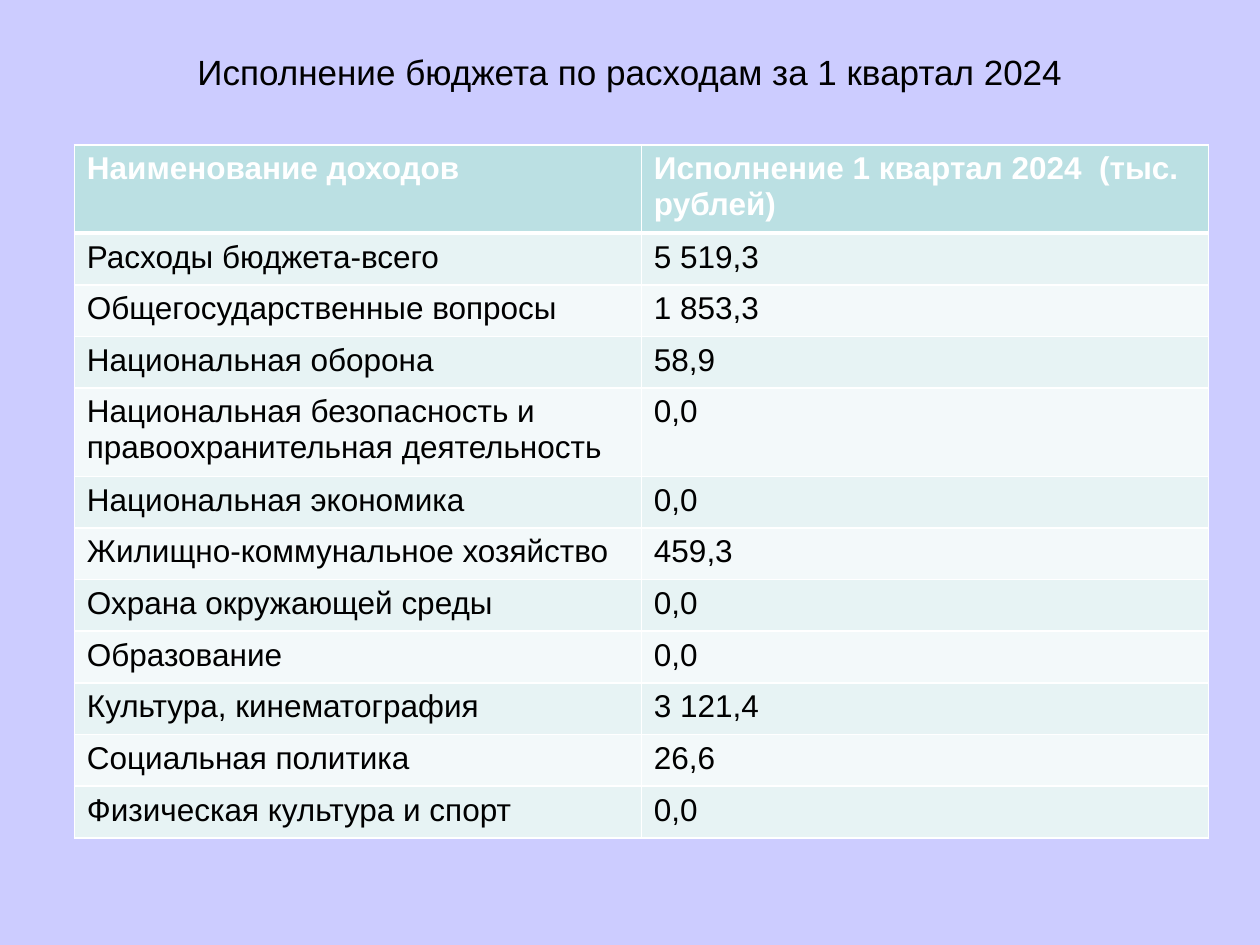
from dataclasses import dataclass
from typing import NamedTuple

from lxml.etree import SubElement
from pptx import Presentation
from pptx.dml.color import RGBColor
from pptx.enum.text import MSO_ANCHOR, PP_ALIGN
from pptx.oxml.ns import qn
from pptx.util import Inches, Pt


@dataclass(frozen=True)
class Theme:
    font: str = "Arial"
    background: str = "CCCCFF"
    text: str = "000000"
    header_text: str = "FFFFFF"
    header_fill: str = "BBE0E3"
    bands: tuple[str, str] = ("E7F3F4", "F3F9FA")
    border: str = "FFFFFF"
    border_width: float = 1
    header_rule: float = 3
    title_size: float = 20
    table_size: float = 18


class BudgetRow(NamedTuple):
    item: str
    amount: str


THEME = Theme()
TITLE = "Исполнение бюджета по расходам за 1 квартал 2024"
HEADER = BudgetRow("Наименование доходов", "Исполнение 1 квартал 2024  (тыс. рублей)")
EXPENSES = [
    BudgetRow("Расходы бюджета-всего", "5 519,3"),
    BudgetRow("Общегосударственные вопросы", "1 853,3"),
    BudgetRow("Национальная оборона", "58,9"),
    BudgetRow("Национальная безопасность и правоохранительная деятельность", "0,0"),
    BudgetRow("Национальная экономика", "0,0"),
    BudgetRow("Жилищно-коммунальное хозяйство", "459,3"),
    BudgetRow("Охрана окружающей среды", "0,0"),
    BudgetRow("Образование", "0,0"),
    BudgetRow("Культура, кинематография", "3 121,4"),
    BudgetRow("Социальная политика", "26,6"),
    BudgetRow("Физическая культура и спорт", "0,0"),
]
COLUMN_WIDTH = Inches(4.5)
ROW_HEIGHT = Inches(0.41)


def add_run(paragraph, text: str, size: float, color: str, bold: bool = False) -> None:
    run = paragraph.add_run()
    run.text = text
    run.font.name = THEME.font
    run.font.size = Pt(size)
    run.font.bold = bold
    run.font.color.rgb = RGBColor.from_string(color)


def set_borders(cell, bottom: float) -> None:
    """Draw all four sides; must precede the fill, which follows them in the schema."""
    properties = cell._tc.get_or_add_tcPr()
    widths = dict.fromkeys(("a:lnL", "a:lnR", "a:lnT"), THEME.border_width)
    for side, width in (widths | {"a:lnB": bottom}).items():
        line = SubElement(properties, qn(side), w=str(Pt(width)))
        SubElement(SubElement(line, qn("a:solidFill")), qn("a:srgbClr"), val=THEME.border)


def add_title(slide) -> None:
    title = slide.shapes.add_textbox(Inches(0.5), Inches(0.3), Inches(9), Inches(0.54))
    frame = title.text_frame
    frame.word_wrap = True
    frame.vertical_anchor = MSO_ANCHOR.MIDDLE
    paragraph = frame.paragraphs[0]
    paragraph.alignment = PP_ALIGN.CENTER
    add_run(paragraph, TITLE, THEME.title_size, THEME.text)


def add_budget_table(slide) -> None:
    rows = [HEADER, *EXPENSES]
    columns = len(HEADER)
    table = slide.shapes.add_table(
        len(rows), columns, Inches(0.59), Inches(1.15),
        COLUMN_WIDTH * columns, ROW_HEIGHT * len(rows),
    ).table
    for column in table.columns:
        column.width = COLUMN_WIDTH
    for index, budget_row in enumerate(rows):
        is_header = index == 0
        table.rows[index].height = ROW_HEIGHT
        fill = THEME.header_fill if is_header else THEME.bands[(index - 1) % 2]
        color = THEME.header_text if is_header else THEME.text
        for cell, text in zip(table.rows[index].cells, budget_row):
            set_borders(cell, THEME.header_rule if is_header else THEME.border_width)
            if index == 1:
                top = cell._tc.tcPr.find(qn("a:lnT"))
                top.set("w", str(Pt(THEME.header_rule)))
            cell.fill.solid()
            cell.fill.fore_color.rgb = RGBColor.from_string(fill)
            add_run(cell.text_frame.paragraphs[0], text, THEME.table_size, color, is_header)


def main() -> None:
    presentation = Presentation()
    presentation.slide_width = Inches(10)
    presentation.slide_height = Inches(7.5)
    slide = presentation.slides.add_slide(presentation.slide_layouts[6])
    slide.background.fill.solid()
    slide.background.fill.fore_color.rgb = RGBColor.from_string(THEME.background)
    add_title(slide)
    add_budget_table(slide)
    presentation.save("out.pptx")


if __name__ == "__main__":
    main()
